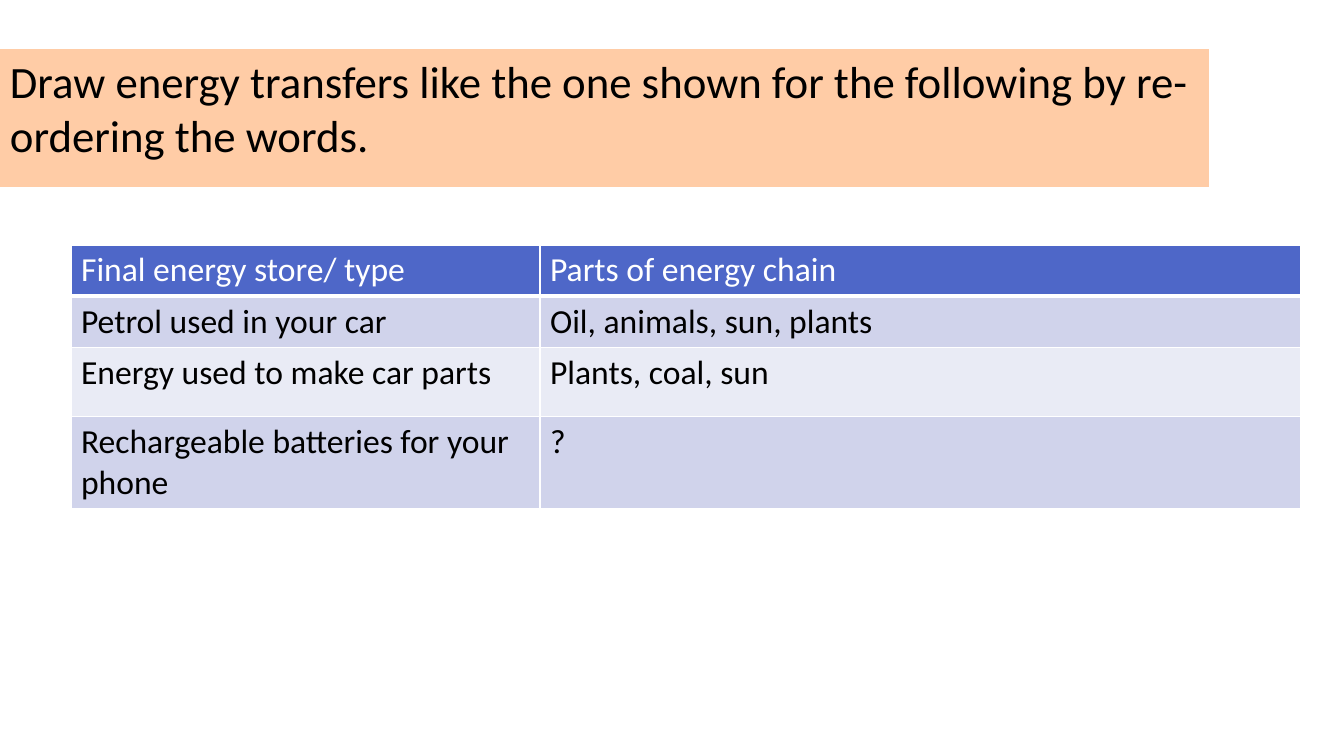
from lxml.etree import SubElement
from pptx import Presentation
from pptx.dml.color import RGBColor
from pptx.enum.shapes import MSO_SHAPE
from pptx.enum.text import MSO_ANCHOR, PP_ALIGN
from pptx.oxml.ns import qn
from pptx.util import Pt

SCALE = 914400 / 100.8
WHITE = RGBColor(0xFF, 0xFF, 0xFF)
BLACK = RGBColor(0x00, 0x00, 0x00)
PEACH = RGBColor(0xFF, 0xCC, 0xA6)
BLUE = RGBColor(0x4E, 0x67, 0xC8)
LILAC = RGBColor(0xD0, 0xD3, 0xEB)
PALE = RGBColor(0xE9, 0xEB, 0xF5)


def px(num):
    return round(num * SCALE)


def write(frame, text, size, color):
    para = frame.paragraphs[0]
    para.text = text
    para.alignment = PP_ALIGN.LEFT
    looks = {"name": "Calibri", "size": Pt(size), "bold": False}
    for key, val in looks.items():
        setattr(para.font, key, val)
    para.font.color.rgb = color


deck = Presentation()
deck.slide_width, deck.slide_height = px(1344), px(756)
slide = deck.slides.add_slide(deck.slide_layouts[6])

# Table of energy chains
rows = [
    ("Final energy store/ type", "Parts of energy chain"),
    ("Petrol used in your car", "Oil, animals, sun, plants"),
    ("Energy used to make car parts", "Plants, coal, sun"),
    ("Rechargeable batteries for your phone", "?"),
]
widths = [469, 761]
heights = [50, 51, 69, 91]
fills = [BLUE, LILAC, PALE, LILAC]
table = slide.shapes.add_table(
    len(rows), len(widths), px(71), px(245), px(sum(widths)), px(sum(heights))
).table
for col, width in zip(table.columns, widths):
    col.width = px(width)

for r, texts in enumerate(rows):
    table.rows[r].height = px(heights[r])
    for c, text in enumerate(texts):
        cell = table.cell(r, c)
        write(cell.text_frame, text, 24, BLACK if r else WHITE)
        # White rules, thicker between header and body
        props = cell._tc.get_or_add_tcPr()
        thick = {0: "lnB", 1: "lnT"}.get(r)
        for side in ("lnL", "lnR", "lnT", "lnB"):
            width = Pt(3 if side == thick else 1)
            line = SubElement(props, qn(f"a:{side}"), w=str(width))
            solid = SubElement(line, qn("a:solidFill"))
            SubElement(solid, qn("a:srgbClr"), val=str(WHITE))
        cell.fill.solid()
        cell.fill.fore_color.rgb = fills[r]

# Task banner
task = slide.shapes.add_shape(MSO_SHAPE.RECTANGLE, 0, px(49), px(1209), px(138))
task.shadow.inherit = False
task.fill.solid()
task.fill.fore_color.rgb = PEACH
task.line.fill.background()
frame = task.text_frame
frame.word_wrap = True
frame.vertical_anchor = MSO_ANCHOR.TOP
write(
    frame,
    "Draw energy transfers like the one shown for the following "
    "by re-ordering the words.",
    32,
    BLACK,
)

deck.save("out.pptx")
